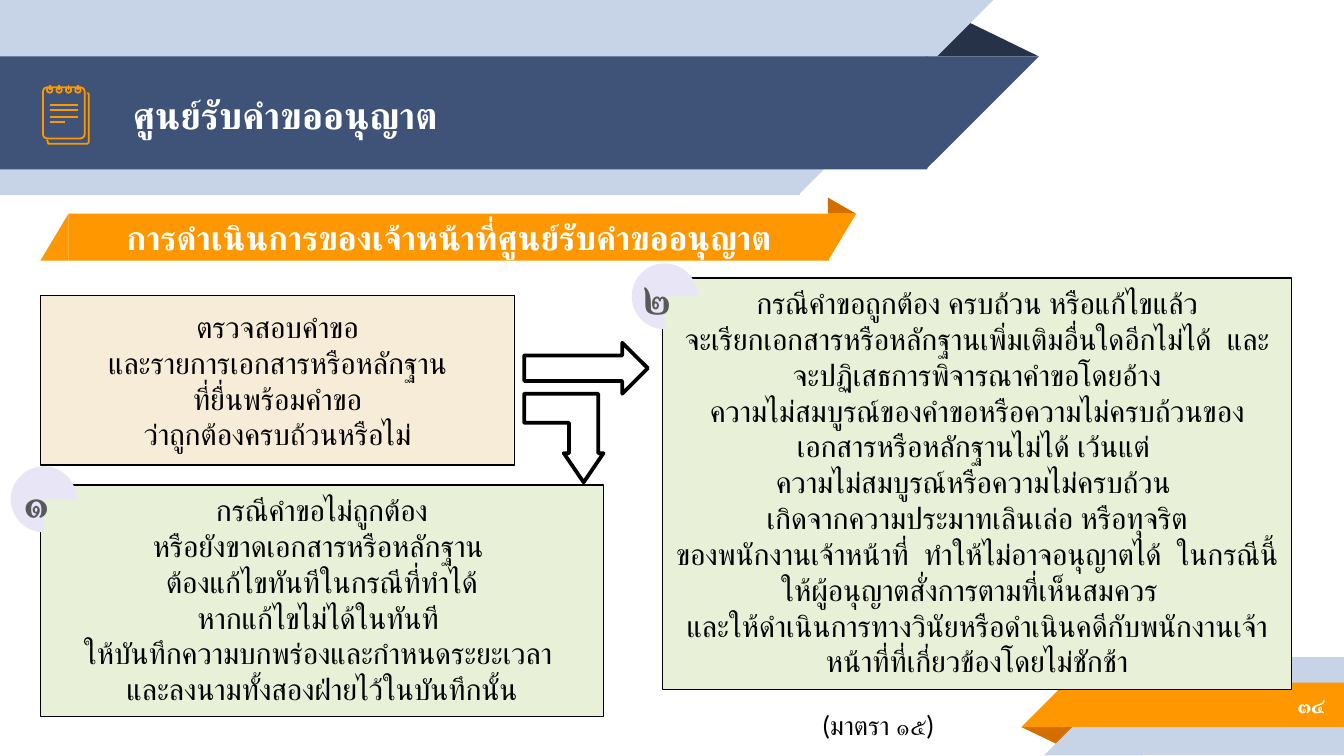
from lxml import etree
from pptx import Presentation
from pptx.dml.color import RGBColor
from pptx.enum.shapes import MSO_CONNECTOR, MSO_SHAPE
from pptx.enum.text import MSO_ANCHOR, PP_ALIGN
from pptx.oxml.ns import qn
from pptx.util import Inches, Pt

RECT, CORNER, TRI = MSO_SHAPE.RECTANGLE, MSO_SHAPE.RIGHT_TRIANGLE, MSO_SHAPE.ISOSCELES_TRIANGLE
OVAL, ROUNDED, PIE = MSO_SHAPE.OVAL, MSO_SHAPE.ROUNDED_RECTANGLE, MSO_SHAPE.PIE
ARROW, BENT_ARROW = MSO_SHAPE.RIGHT_ARROW, MSO_SHAPE.BENT_UP_ARROW
TOP, MIDDLE = MSO_ANCHOR.TOP, MSO_ANCHOR.MIDDLE
LEFT, CENTER, RIGHT = PP_ALIGN.LEFT, PP_ALIGN.CENTER, PP_ALIGN.RIGHT
STRAIGHT = MSO_CONNECTOR.STRAIGHT

FONT = "Lato"
COLORS = {
    "navy": "3F5378", "dark": "263248", "pale": "C7D3E6", "orange": "FF9800",
    "rust": "D26F00", "cream": "F7ECD7", "green": "E8F0D8", "lilac": "E8E6F6",
    "grey": "595959", "black": "000000", "white": "FFFFFF",
}

TITLE = "ศูนย์รับคำขออนุญาต"
SUBTITLE = "การดำเนินการของเจ้าหน้าที่ศูนย์รับคำขออนุญาต"
PAGE = "๓๔"
SECTION = "(มาตรา ๑๕)"

CHECK = [
    "ตรวจสอบคำขอ",
    "และรายการเอกสารหรือหลักฐาน",
    "ที่ยื่นพร้อมคำขอ\vว่าถูกต้องครบถ้วนหรือไม่",
]
INCOMPLETE = [
    "กรณีคำขอไม่ถูกต้อง",
    "หรือยังขาดเอกสารหรือหลักฐาน ",
    "ต้องแก้ไขทันทีในกรณีที่ทำได้\vหากแก้ไขไม่ได้ในทันที ",
    "ให้บันทึกความบกพร่องและกำหนดระยะเวลา \vและลงนามทั้งสองฝ่ายไว้ในบันทึกนั้น",
]
COMPLETE = [
    "กรณีคำขอถูกต้อง ครบถ้วน หรือแก้ไขแล้ว",
    "จะเรียกเอกสารหรือหลักฐานเพิ่มเติมอื่นใดอีกไม่ได้  และจะปฏิเสธการพิจารณาคำขอโดยอ้าง",
    "ความไม่สมบูรณ์ของคำขอหรือความไม่ครบถ้วนของเอกสารหรือหลักฐานไม่ได้ เว้นแต่ ",
    "ความไม่สมบูรณ์หรือความไม่ครบถ้วน ",
    "เกิดจากความประมาทเลินเล่อ หรือทุจริต",
    "ของพนักงานเจ้าหน้าที่  ทำให้ไม่อาจอนุญาตได้  ในกรณีนี้ให้ผู้อนุญาตสั่งการตามที่เห็นสมควร  ",
    "และให้ดำเนินการทางวินัยหรือดำเนินคดีกับพนักงานเจ้าหน้าที่ที่เกี่ยวข้องโดยไม่ชักช้า",
]

BOXES = [
    ((0.3, 2.2, 3.53, 1.26), "cream", CHECK, MIDDLE, None),
    ((0.3, 3.61, 4.19, 1.72), "green", INCOMPLETE, TOP, ("๑", 0.08, 3.47)),
    ((4.93, 2.07, 4.68, 3.06), "green", COMPLETE, TOP, ("๒", 4.7, 1.96)),
]

BANDS = [
    (TRI, (6.88, 0.14, 0.85, 0.28), "dark", 0, False, [0.324]),
    (RECT, (0, 0, 5.95, 1.45), "pale", 0, False, []),
    (CORNER, (5.94, 0, 1.45, 1.45), "pale", 180, True, []),
    (RECT, (0, 0.42, 6.9, 0.84), "navy", 0, False, []),
    (CORNER, (6.89, 0.42, 0.84, 0.84), "navy", 180, True, []),
    (TRI, (7.6, 5.41, 0.43, 0.14), "rust", 180, False, [0.324]),
    (RECT, (8.49, 4.89, 1.51, 0.73), "pale", 0, False, []),
    (CORNER, (7.77, 4.89, 0.73, 0.73), "pale", 0, True, []),
    (RECT, (7.92, 5.08, 2.08, 0.33), "orange", 0, False, []),
    (CORNER, (7.6, 5.08, 0.33, 0.33), "orange", 0, True, []),
    (CORNER, (0.3, 1.59, 0.21, 0.35), "orange", 0, True, []),
    (CORNER, (6.16, 1.59, 0.21, 0.35), "orange", 180, True, []),
    (TRI, (6.16, 1.47, 0.21, 0.12), "rust", 0, False, [0]),
]

BACK_PAGE = [(0.35, 1.04), (0.36, 1.07), (0.37, 1.07), (0.65, 1.07),
             (0.66, 1.06), (0.66, 0.7), (0.65, 0.69)]
RULES = [(0.78, 0.58), (0.82, 0.58), (0.87, 0.58), (0.91, 0.48)]
RINGS = [0.37 + 0.07 * i for i in range(4)]

prs = Presentation()
prs.slide_width = Inches(10)
prs.slide_height = prs.slide_width * 9 // 16
s = prs.slides.add_slide(prs.slide_layouts[6])


def rgb(name):
    return RGBColor.from_string(COLORS[name])


def paint(sp, fill, line, width):
    sp.shadow.inherit = False
    if fill:
        sp.fill.solid()
        sp.fill.fore_color.rgb = rgb(fill)
    else:
        sp.fill.background()
    if line:
        sp.line.color.rgb = rgb(line)
        sp.line.width = Pt(width)
    else:
        sp.line.fill.background()


def shape(kind, at, fill=None, rot=0, flip=None, adj=(), line=None, width=0.75):
    sp = s.shapes.add_shape(kind, *map(Inches, at))
    paint(sp, fill, line, width)
    sp.rotation = rot
    if flip:
        sp._element.spPr.xfrm.set(flip, "1")
    for i, value in enumerate(adj):
        sp.adjustments[i] = value
    return sp


def write(sp, lines, size, color, align=CENTER, anchor=MIDDLE, bold=False, inset=0.05, wrap=True):
    tf = sp.text_frame
    tf.word_wrap = wrap
    tf.vertical_anchor = anchor
    tf.margin_top = tf.margin_bottom = Inches(inset)
    for i, line in enumerate(lines):
        p = tf.add_paragraph() if i else tf.paragraphs[0]
        p.text = line
        p.alignment = align
        p.font.size, p.font.bold, p.font.name = Pt(size), bold, FONT
        p.font.color.rgb = rgb(color)
        etree.SubElement(p.font._element, qn("a:cs"), typeface=FONT)


def text(at, *args, **kwargs):
    write(s.shapes.add_textbox(*map(Inches, at)), *args, **kwargs)


def stroke(x1, y1, x2, y2):
    c = s.shapes.add_connector(STRAIGHT, *map(Inches, (x1, y1, x2, y2)))
    c.line.color.rgb = rgb("orange")
    c.line.width = Pt(0.96)
    etree.SubElement(c._element.spPr, qn("a:effectLst"))


for kind, at, fill, rot, flipped, adj in BANDS:
    shape(kind, at, fill, rot, "flipH" if flipped else None, adj)

text((0.89, 0.43, 6.11, 0.84), [TITLE], 20, "white", LEFT, bold=True, inset=0.1)
text((8.33, 5.07, 1.63, 0.35), [PAGE], 12, "white", RIGHT, bold=True, inset=0.1)
write(shape(RECT, (0.51, 1.59, 5.66, 0.35), "orange"), [SUBTITLE], 18, "white", bold=True, inset=0.1)

points = [(Inches(x), Inches(y)) for x, y in BACK_PAGE]
builder = s.shapes.build_freeform(*points[0])
builder.add_line_segments(points[1:], close=False)
paint(builder.convert_to_shape(), None, "orange", 0.96)
shape(ROUNDED, (0.32, 0.65, 0.31, 0.38), adj=[0.1], line="orange", width=0.96)
for x in RINGS:
    shape(OVAL, (x - 0.02, 0.65, 0.04, 0.04), line="orange", width=0.96)
    stroke(x, 0.63, x, 0.67)
for y, right in RULES:
    stroke(0.37, y, right, y)

for at, fill, lines, anchor, badge in BOXES:
    write(shape(RECT, at, fill, line="black"), lines, 16, "black", anchor=anchor)
    if badge:
        number, left, top = badge
        sp = shape(PIE, (left, top, 0.49, 0.49), "lilac", rot=90)
        write(sp, [number], 24, "grey", LEFT, bold=True)
        sp.text_frame._txBody.bodyPr.set("vert", "vert270")

text((5.94, 5.23, 1.19, 0.34), [SECTION], 14, "black", anchor=TOP, wrap=False)
shape(BENT_ARROW, (3.9, 2.93, 0.59, 0.66), flip="flipV", adj=[0.368, 0.25, 0.368], line="black", width=2)
shape(ARROW, (3.9, 2.55, 0.92, 0.38), line="black", width=2)

prs.save("out.pptx")
